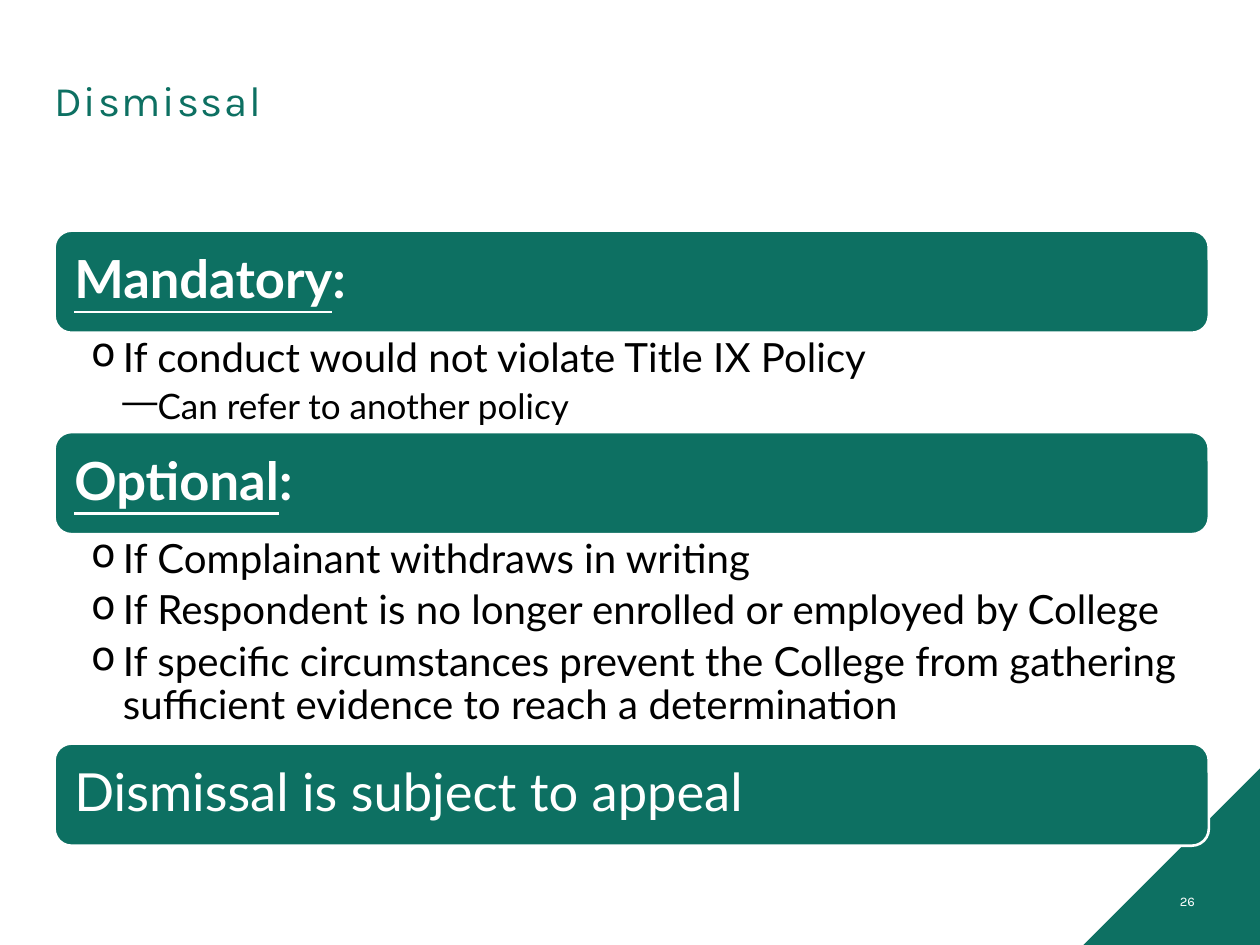
from lxml import etree
from pptx import Presentation
from pptx.dml.color import RGBColor
from pptx.enum.shapes import MSO_SHAPE
from pptx.enum.text import MSO_ANCHOR, PP_ALIGN
from pptx.oxml.ns import qn
from pptx.util import Cm, Pt

ROUNDED = MSO_SHAPE.ROUNDED_RECTANGLE
TRIANGLE = MSO_SHAPE.RIGHT_TRIANGLE
MIDDLE = MSO_ANCHOR.MIDDLE
TOP = MSO_ANCHOR.TOP
LEFT = PP_ALIGN.LEFT
RIGHT = PP_ALIGN.RIGHT

GREEN, WHITE, BLACK = "0D7062", "FFFFFF", "000000"
PAGE_WIDTH, PAGE_HEIGHT = 25.4, 19.05
MARGIN, CONTENT_WIDTH = 1.1, 23.27
BAND_HEIGHT = 2.06
LEVELS = {1: ("o", 0.64, 23), 2: ("—", 1.27, 20)}
SECTIONS = [
    ("Mandatory", ":", 2.0, [
        (1, "If conduct would not violate Title IX Policy"),
        (2, "Can refer to another policy"),
    ]),
    ("Optional", ":", 4.22, [
        (1, "If Complainant withdraws in writing"),
        (1, "If Respondent is no longer enrolled or employed by College"),
        (1, "If specific circumstances prevent the College from gathering "
            "sufficient evidence to reach a determination"),
    ]),
    ("", "Dismissal is subject to appeal", 0, []),
]


def color(value):
    return RGBColor.from_string(value)


def set_font(para, name, size, value):
    para.font.name = name
    para.font.size = Pt(size)
    para.font.color.rgb = color(value)


def set_frame(frame, anchor, left, top, right, bottom):
    frame.word_wrap = True
    frame.vertical_anchor = anchor
    frame.margin_left, frame.margin_top = Cm(left), Cm(top)
    frame.margin_right, frame.margin_bottom = Cm(right), Cm(bottom)


def add_bullet(para, mark, indent):
    properties = para._p.get_or_add_pPr()
    properties.set("marL", str(Cm(indent)))
    properties.set("indent", str(-Cm(0.64)))
    etree.SubElement(properties, qn("a:buChar")).set("char", mark)


def add_title(page, text, left, top, width, height):
    title = page.shapes.title
    title.left, title.top = Cm(left), Cm(top)
    title.width, title.height = Cm(width), Cm(height)
    set_frame(title.text_frame, MIDDLE, 0, 0.13, 0.25, 0.13)
    para = title.text_frame.paragraphs[0]
    span = para.add_run()
    span.text = text
    span.font._element.set("spc", "100")
    para.alignment = LEFT
    para.line_spacing = 0.9
    set_font(para, "Karla", 24, GREEN)


def add_corner(page, number, side):
    corner = page.shapes.add_shape(
        TRIANGLE, Cm(PAGE_WIDTH - side), Cm(PAGE_HEIGHT - side), Cm(side), Cm(side))
    corner.element.spPr.xfrm.set("flipH", "1")
    corner.shadow.inherit = False
    corner.fill.solid()
    corner.fill.fore_color.rgb = color(GREEN)
    corner.line.fill.background()

    box = page.shapes.add_textbox(
        Cm(PAGE_WIDTH - 6.78), Cm(PAGE_HEIGHT - 1.4), Cm(5.72), Cm(1.02))
    set_frame(box.text_frame, MIDDLE, 0.25, 0.13, 0.25, 0.13)
    para = box.text_frame.paragraphs[0]
    para.text = number
    para.alignment = RIGHT
    set_font(para, "Karla", 7.5, WHITE)


def add_band(page, heading, rest, left, top, width, height):
    band = page.shapes.add_shape(ROUNDED, Cm(left), Cm(top), Cm(width), Cm(height))
    band.shadow.inherit = False
    band.fill.solid()
    band.fill.fore_color.rgb = color(GREEN)
    band.line.color.rgb = color(WHITE)
    band.line.width = Pt(1.5)
    set_frame(band.text_frame, MIDDLE, 0.3, 0.3, 0.3, 0.3)
    para = band.text_frame.paragraphs[0]
    if heading:
        span = para.add_run()
        span.text = heading
        span.font.underline = True
    para.add_run().text = rest
    para.alignment = LEFT
    para.line_spacing = 0.9
    set_font(para, "Lato", 30, WHITE)
    para.font.bold = bool(heading)


def add_points(page, points, left, top, width, height):
    box = page.shapes.add_textbox(Cm(left), Cm(top), Cm(width), Cm(height))
    frame = box.text_frame
    set_frame(frame, TOP, 0.74, 0.09, 0.45, 0.09)
    for index, (level, text) in enumerate(points):
        para = frame.add_paragraph() if index else frame.paragraphs[0]
        mark, indent, size = LEVELS[level]
        para.text = text
        para.level = level
        add_bullet(para, mark, indent)
        para.line_spacing = 0.9
        para.space_after = Pt(size * 0.2)
        set_font(para, "Lato", size, BLACK)


def add_sections(page, sections, left, top, width):
    for heading, rest, height, points in sections:
        add_band(page, heading, rest, left, top, width, BAND_HEIGHT)
        top += BAND_HEIGHT
        if points:
            add_points(page, points, left, top, width, height)
        top += height


def main():
    deck = Presentation()
    deck.slide_width, deck.slide_height = Cm(PAGE_WIDTH), Cm(PAGE_HEIGHT)
    page = deck.slides.add_slide(deck.slide_layouts[5])
    add_corner(page, "26", 3.56)
    add_title(page, "Dismissal", MARGIN, 1.02, CONTENT_WIDTH, 2.1)
    add_sections(page, SECTIONS, MARGIN, 4.65, CONTENT_WIDTH)
    deck.save("out.pptx")


if __name__ == "__main__":
    main()
